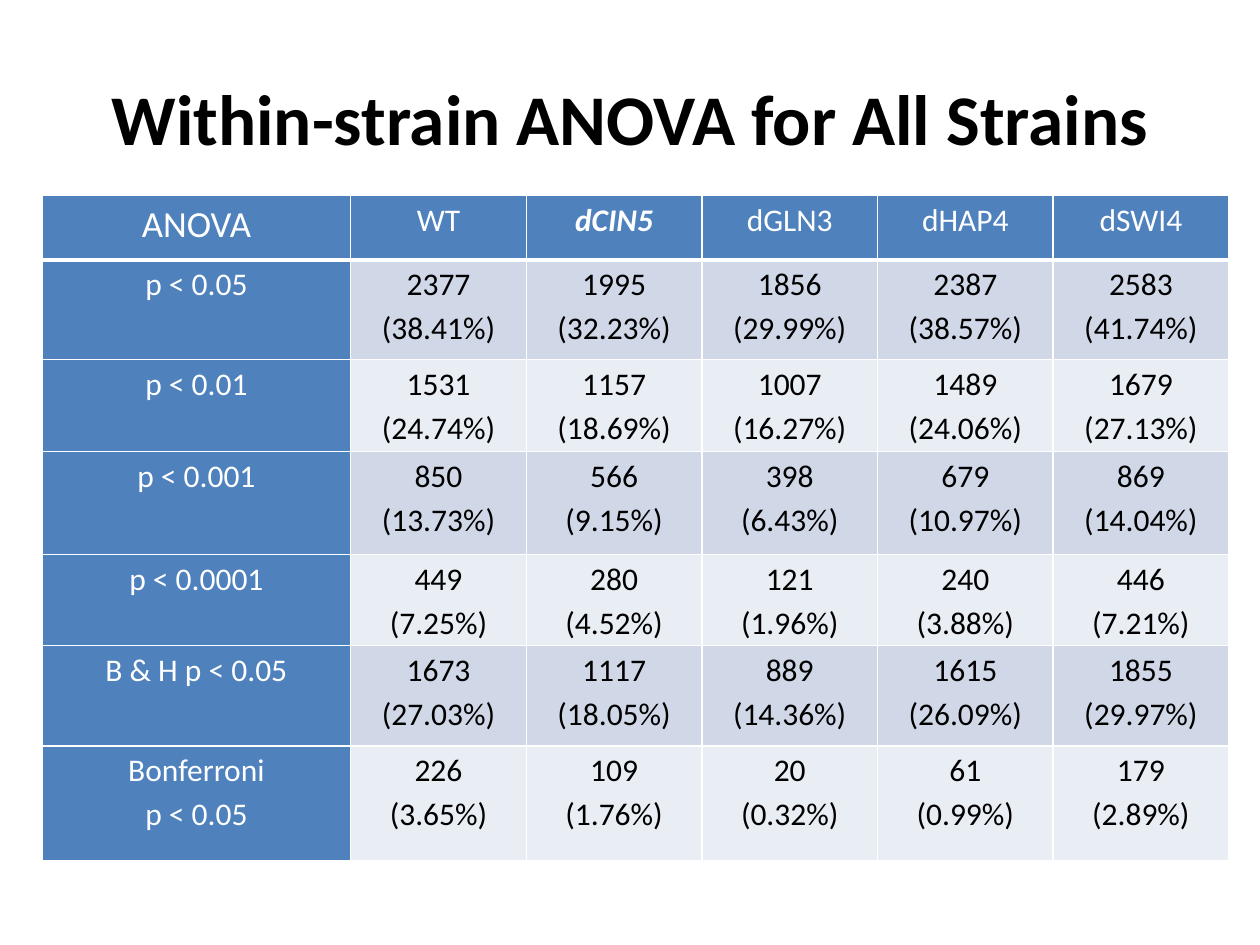
from dataclasses import dataclass

from lxml import etree
from pptx import Presentation
from pptx.dml.color import RGBColor
from pptx.enum.text import MSO_ANCHOR, MSO_AUTO_SIZE, PP_ALIGN
from pptx.oxml.ns import qn
from pptx.util import Cm, Pt

CENTER = PP_ALIGN.CENTER
MIDDLE = MSO_ANCHOR.MIDDLE
TOP = MSO_ANCHOR.TOP
NO_FIT = MSO_AUTO_SIZE.NONE


@dataclass(frozen=True)
class Theme:
    """Colours, font and type sizes of the slide."""
    font: str = "Calibri"
    dark: str = "000000"
    light: str = "FFFFFF"
    head: str = "4F81BD"
    bands: tuple = ("D0D8E8", "E9EDF4")
    title_size: float = 40.7
    corner_size: float = 21
    cell_size: float = 18
    line: float = 1
    head_line: float = 3


THEME = Theme()
TITLE = "Within-strain ANOVA for All Strains"
EMPHASIS = "dCIN5"
HEADER = ["ANOVA", "WT", EMPHASIS, "dGLN3", "dHAP4", "dSWI4"]
ROWS = [
    ["p < 0.05", "2377\n(38.41%)", "1995\n(32.23%)", "1856\n(29.99%)", "2387\n(38.57%)", "2583\n(41.74%)"],
    ["p < 0.01", "1531\n(24.74%)", "1157\n(18.69%)", "1007\n(16.27%)", "1489\n(24.06%)", "1679\n(27.13%)"],
    ["p < 0.001", "850\n(13.73%)", "566\n(9.15%)", "398\n(6.43%)", "679\n(10.97%)", "869\n(14.04%)"],
    ["p < 0.0001", "449\n(7.25%)", "280\n(4.52%)", "121\n(1.96%)", "240\n(3.88%)", "446\n(7.21%)"],
    ["B & H p < 0.05", "1673\n(27.03%)", "1117\n(18.05%)", "889\n(14.36%)", "1615\n(26.09%)", "1855\n(29.97%)"],
    ["Bonferroni\np < 0.05", "226\n(3.65%)", "109\n(1.76%)", "20\n(0.32%)", "61\n(0.99%)", "179\n(2.89%)"],
]
LABEL_WIDTH = 6.22
ROW_HEIGHTS = [1.3, 2.01, 1.85, 2.08, 1.83, 2.03, 2.31]


def style_paragraph(p, size, color, bold=False, italic=False):
    """Centre a paragraph and set its font."""
    p.alignment = CENTER
    p.font.name = THEME.font
    p.font.size = Pt(size)
    p.font.bold = bold
    p.font.italic = italic
    p.font.color.rgb = RGBColor.from_string(color)


def set_borders(cell, bottom):
    """Draw the four borders of a cell, with its own bottom width."""
    tc_pr = cell._tc.get_or_add_tcPr()
    widths = {"a:lnL": THEME.line, "a:lnR": THEME.line, "a:lnT": THEME.line, "a:lnB": bottom}
    for i, (tag, width) in enumerate(widths.items()):
        ln = etree.Element(qn(tag), w=str(Pt(width)))
        fill = etree.SubElement(ln, qn("a:solidFill"))
        etree.SubElement(fill, qn("a:srgbClr"), val=THEME.light)
        tc_pr.insert(i, ln)


def fill_cell(cell, text, row, col):
    """Write and format one cell according to its row and column."""
    is_head = row == 0 or col == 0
    size = THEME.corner_size if row == col == 0 else THEME.cell_size
    color = THEME.light if is_head else THEME.dark
    fill = THEME.head if is_head else THEME.bands[(row - 1) % 2]
    strong = text == EMPHASIS
    cell.margin_left = cell.margin_right = Cm(0.18)
    cell.margin_top = cell.margin_bottom = 0
    cell.vertical_anchor = TOP
    cell.fill.solid()
    cell.fill.fore_color.rgb = RGBColor.from_string(fill)
    cell.text = text
    for p in cell.text_frame.paragraphs:
        style_paragraph(p, size, color, strong, strong)
        p.line_spacing = 1.15
    set_borders(cell, THEME.head_line if row == 0 else THEME.line)


def add_title(slide, left, top, width, height):
    """Place the title placeholder in the given box."""
    sp = slide.shapes.title
    sp.left, sp.top, sp.width, sp.height = Cm(left), Cm(top), Cm(width), Cm(height)
    tf = sp.text_frame
    tf.text = TITLE
    tf.word_wrap = True
    tf.auto_size = NO_FIT
    tf.vertical_anchor = MIDDLE
    style_paragraph(tf.paragraphs[0], THEME.title_size, THEME.dark, bold=True)


def add_anova_table(slide, left, top, width, height):
    """Place the table of significant genes per strain in the given box."""
    data = [HEADER, *ROWS]
    box = Cm(left), Cm(top), Cm(width), Cm(height)
    table = slide.shapes.add_table(len(data), len(HEADER), *box).table
    table.first_col = True
    strain_width = (width - LABEL_WIDTH) / (len(HEADER) - 1)
    for col, column in enumerate(table.columns):
        column.width = Cm(strain_width if col else LABEL_WIDTH)
    scale = height / sum(ROW_HEIGHTS)
    for row, values in enumerate(data):
        table.rows[row].height = Cm(ROW_HEIGHTS[row] * scale)
        for col, text in enumerate(values):
            fill_cell(table.cell(row, col), text, row, col)


def main():
    """Build the slide and save it."""
    prs = Presentation()
    prs.slide_width, prs.slide_height = Cm(25.4), Cm(19.05)
    slide = prs.slides.add_slide(prs.slide_layouts[5])
    add_anova_table(slide, 0.85, 3.94, 23.92, 13.41)
    add_title(slide, 1.27, 0.76, 22.86, 3.18)
    prs.save("out.pptx")


if __name__ == "__main__":
    main()
